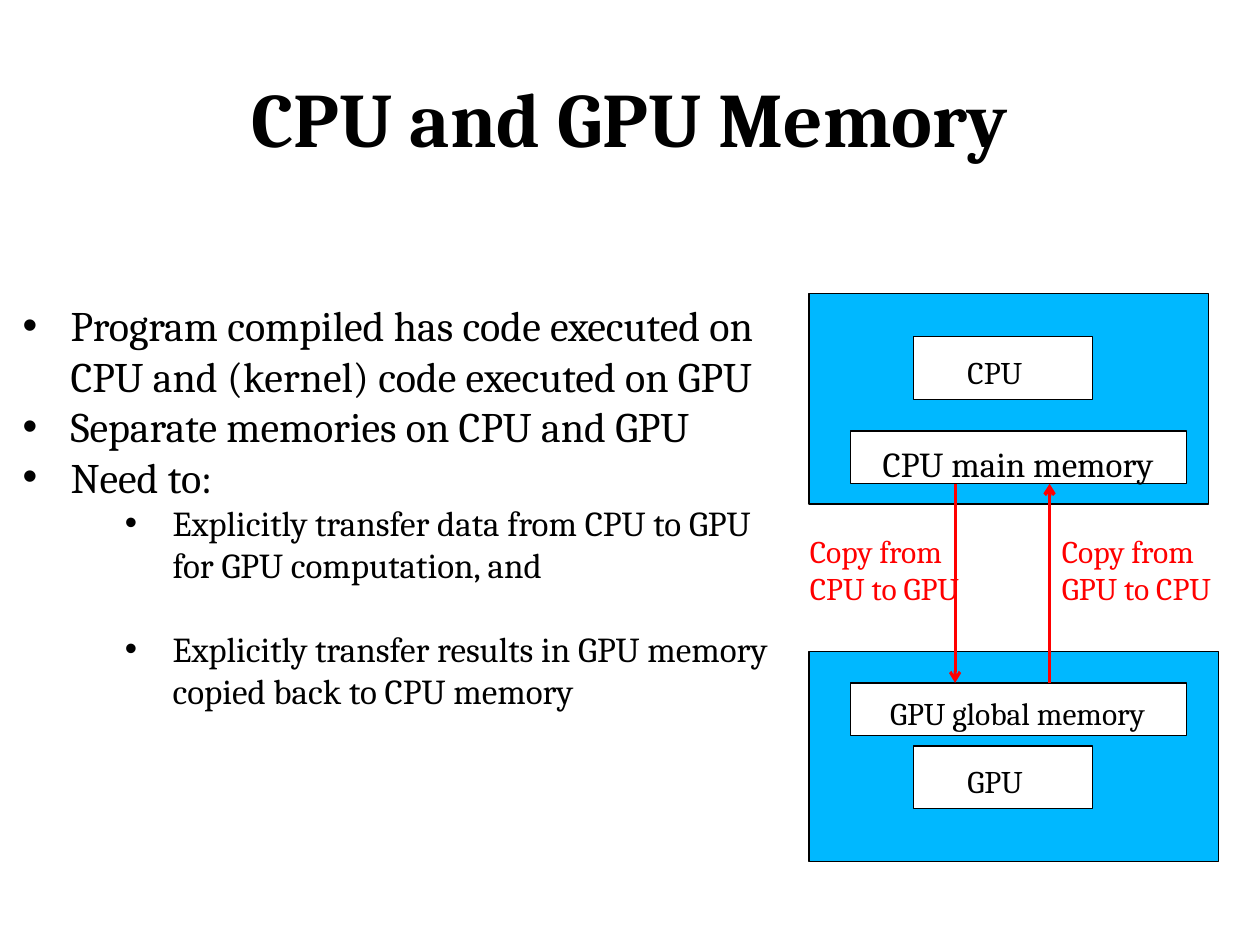
from lxml import etree
from pptx import Presentation
from pptx.dml.color import RGBColor
from pptx.enum.shapes import MSO_CONNECTOR, MSO_SHAPE
from pptx.enum.text import MSO_ANCHOR, MSO_AUTO_SIZE, PP_ALIGN
from pptx.oxml.ns import qn
from pptx.util import Inches, Pt

STRAIGHT, RECTANGLE = MSO_CONNECTOR.STRAIGHT, MSO_SHAPE.RECTANGLE
LEFT, CENTER = PP_ALIGN.LEFT, PP_ALIGN.CENTER
FONT = "Cambria"
BLACK, WHITE, BLUE, RED = "000000", "FFFFFF", "00B8FF", "FF0000"

TITLE = "CPU and GPU Memory"
# text, level, space before in points
POINTS = [
    ("Program compiled has code executed on CPU and (kernel) code executed on GPU", 0, 0),
    ("Separate memories on CPU and GPU", 0, 0),
    ("Need to:", 0, 0),
    ("Explicitly transfer data from CPU to GPU for GPU computation, and", 1, 0),
    ("Explicitly transfer results in GPU memory copied back to CPU memory", 1, 24),
]
LEVELS = [(24, 0.38), (20, 1.19)]  # size, indent
HANGING = 0.38

CPU_MEMORY_TOP, GPU_MEMORY_TOP, MEMORY_HEIGHT = 3.42, 5.42, 0.42
CPU_MEMORY_BOTTOM = CPU_MEMORY_TOP + MEMORY_HEIGHT
BOXES = [
    ((6.42, 2.33, 3.17, 1.67), BLUE),
    ((6.42, 5.17, 3.25, 1.67), BLUE),
    ((6.75, CPU_MEMORY_TOP, 2.67, MEMORY_HEIGHT), WHITE),
    ((6.75, GPU_MEMORY_TOP, 2.67, MEMORY_HEIGHT), WHITE),
    ((7.25, 2.67, 1.42, 0.5), WHITE),
    ((7.25, 5.92, 1.42, 0.5), WHITE),
]
# x, from y, to y, width
TRANSFERS = [
    (7.58, CPU_MEMORY_BOTTOM, GPU_MEMORY_TOP, 1.75),
    (8.33, GPU_MEMORY_TOP, CPU_MEMORY_BOTTOM, 2),
]
LABELS = [
    ("CPU", (7.58, 2.75, 0.69, 0.4), {}),
    ("GPU", (7.58, 6, 0.71, 0.4), {}),
    ("CPU main memory", (6.86, 3.46, 2.44, 0.44), {"size": 20, "align": CENTER}),
    ("GPU global memory", (6.92, 5.46, 2.31, 0.4), {"align": CENTER}),
    ("Copy from CPU to GPU", (6.33, 4.17, 1.5, 1.01), {"color": RED, "wrap": True}),
    ("Copy from GPU to CPU", (8.33, 4.17, 1.5, 1.01), {"color": RED, "wrap": True}),
]


def rgb(color):
    return RGBColor.from_string(color)


def inches(values):
    return [Inches(value) for value in values]


def place(shape, bounds):
    shape.left, shape.top, shape.width, shape.height = inches(bounds)


def write(paragraph, text, size=18, color=BLACK, bold=False, align=LEFT):
    paragraph.alignment = align
    run = paragraph.add_run()
    run.text = text
    font = run.font
    font.name, font.size, font.bold = FONT, Pt(size), bold
    font.color.rgb = rgb(color)


def add_bullet(paragraph, indent):
    properties = paragraph._p.get_or_add_pPr()
    properties.set("marL", str(Inches(indent)))
    properties.set("indent", str(-Inches(HANGING)))
    etree.SubElement(properties, qn("a:buChar")).set("char", "•")


def add_box(slide, bounds, fill):
    box = slide.shapes.add_shape(RECTANGLE, *inches(bounds))
    box.shadow.inherit = False
    box.fill.solid()
    box.fill.fore_color.rgb = rgb(fill)
    box.line.color.rgb = rgb(BLACK)
    box.line.width = Pt(0.75)


def add_arrow(slide, x, start, end, width):
    arrow = slide.shapes.add_connector(STRAIGHT, *inches((x, start, x, end)))
    arrow.line.color.rgb = rgb(RED)
    arrow.line.width = Pt(width)
    etree.SubElement(arrow.line._get_or_add_ln(), qn("a:tailEnd")).set("type", "arrow")
    etree.SubElement(arrow._element.spPr, qn("a:effectLst"))


def add_label(slide, text, bounds, wrap=False, **style):
    frame = slide.shapes.add_textbox(*inches(bounds)).text_frame
    frame.word_wrap = wrap
    frame.auto_size = MSO_AUTO_SIZE.SHAPE_TO_FIT_TEXT
    write(frame.paragraphs[0], text, **style)


def main():
    deck = Presentation()
    deck.slide_width, deck.slide_height = Inches(10), Inches(7.5)
    slide = deck.slides.add_slide(deck.slide_layouts[1])

    title = slide.shapes.title
    place(title, (0.5, 0.3, 9, 1.25))
    title.text_frame.vertical_anchor = MSO_ANCHOR.MIDDLE
    write(title.text_frame.paragraphs[0], TITLE, size=44, bold=True, align=CENTER)

    body = slide.placeholders[1]
    place(body, (0.08, 2.33, 6.17, 3.4))
    frame = body.text_frame
    frame.auto_size = MSO_AUTO_SIZE.NONE
    for index, (text, level, space) in enumerate(POINTS):
        paragraph = frame.add_paragraph() if index else frame.paragraphs[0]
        size, indent = LEVELS[level]
        paragraph.level = level
        paragraph.space_before = Pt(space)
        add_bullet(paragraph, indent)
        write(paragraph, text, size=size)

    for bounds, fill in BOXES:
        add_box(slide, bounds, fill)
    for transfer in TRANSFERS:
        add_arrow(slide, *transfer)
    for text, bounds, style in LABELS:
        add_label(slide, text, bounds, **style)

    deck.save("out.pptx")


if __name__ == "__main__":
    main()
